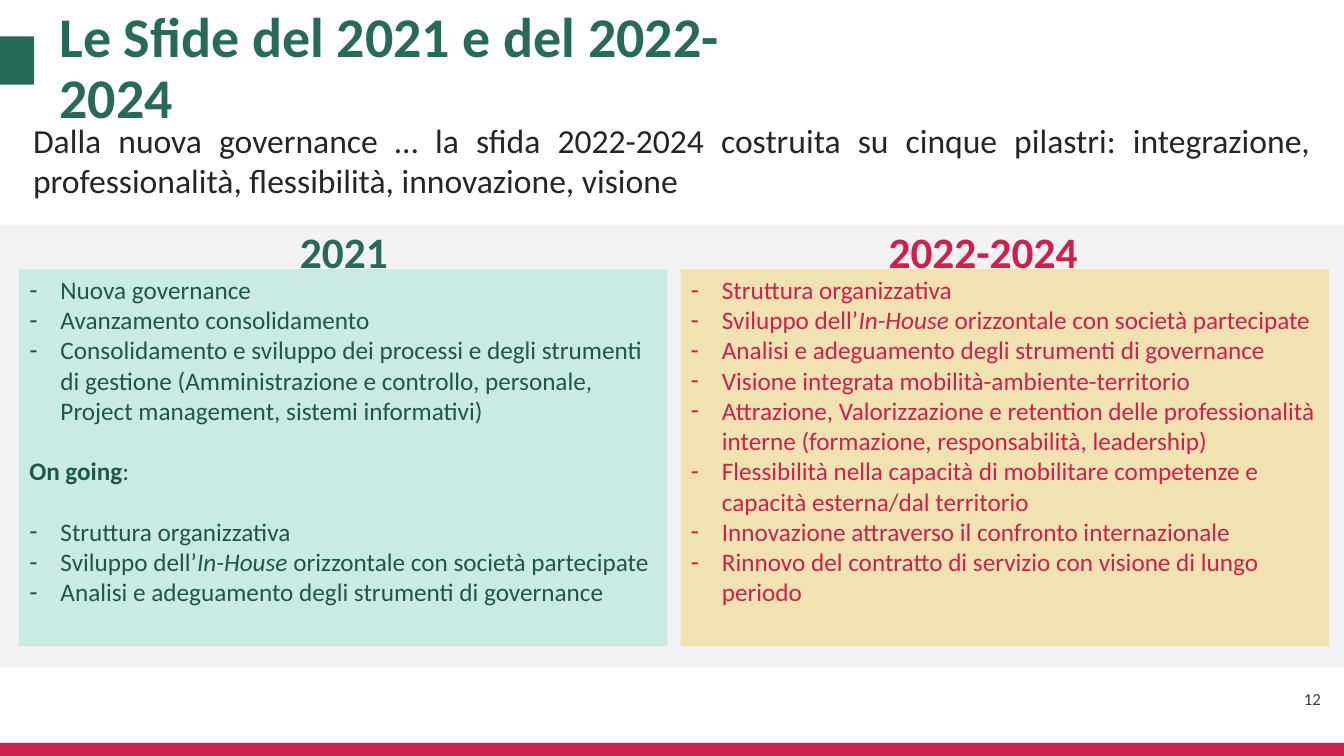
"""Build the slide on the challenges of 2021 and 2022-2024."""
from dataclasses import dataclass
from typing import Optional

import lxml.etree
import pptx
import pptx.dml.color
import pptx.enum.shapes
import pptx.enum.text
import pptx.oxml.ns
import pptx.shapes.autoshape
import pptx.slide
import pptx.text.text
import pptx.util

Inches = pptx.util.Inches
Pt = pptx.util.Pt
ALIGN = pptx.enum.text.PP_ALIGN
ANCHOR = pptx.enum.text.MSO_ANCHOR


@dataclass(frozen=True)
class Theme:
    font: str = "Calibri"
    green: str = "276A58"
    dark_green: str = "205647"
    red: str = "CF204B"
    mint: str = "CAEBE2"
    sand: str = "F0E2B1"
    grey: str = "F2F2F2"
    ink: str = "252525"
    number_ink: str = "413A3A"
    title: int = 40
    heading: int = 31
    lead: int = 24
    body: int = 18
    number: int = 12
    indent: float = 0.31


@dataclass(frozen=True)
class Box:
    left: float
    top: float
    width: float
    height: float

    def emu(self) -> list[int]:
        return [Inches(v) for v in (self.left, self.top, self.width, self.height)]


@dataclass(frozen=True)
class Run:
    text: str
    bold: bool = False
    italic: bool = False


@dataclass(frozen=True)
class Para:
    runs: tuple[Run, ...]
    bullet: Optional[str] = None
    before: float = 0


@dataclass(frozen=True)
class Band:
    box: Box
    fill: str


@dataclass(frozen=True)
class Column:
    heading: str
    heading_box: Box
    heading_color: str
    text_color: str
    fill: str
    items: tuple[Para, ...]


THEME = Theme()


def item(*runs: Run, before: float = 0) -> Para:
    return Para(runs, "-", before)


def items(*texts: str) -> tuple[Para, ...]:
    return tuple(item(Run(text)) for text in texts)


BANDS = (
    Band(Box(0, 7.37, 13.33, 0.13), THEME.red),
    Band(Box(0, 2.23, 13.33, 4.39), THEME.grey),
    Band(Box(0, 0.36, 0.34, 0.48), THEME.green),
)
IN_HOUSE = (Run("Sviluppo dell’"), Run("In-House", italic=True),
            Run(" orizzontale con società partecipate"))
GOVERNANCE = Run("Analisi e adeguamento degli strumenti di governance")
STRUCTURE = Run("Struttura organizzativa")
LINE_GAP = 21.6

COLUMNS = (
    Column("2021", Box(2.69, 2.3, 1.44, 0.51), THEME.green, THEME.dark_green, THEME.mint, (
        *items(
            "Nuova governance",
            "Avanzamento consolidamento",
            "Consolidamento e sviluppo dei processi e degli strumenti di gestione "
            "(Amministrazione e controllo, personale, Project management, sistemi informativi)",
        ),
        Para((Run("On going", bold=True), Run(":")), before=LINE_GAP),
        item(STRUCTURE, before=LINE_GAP),
        item(*IN_HOUSE),
        item(GOVERNANCE),
    )),
    Column("2022-2024", Box(8.54, 2.3, 2.42, 0.51), THEME.red, THEME.red, THEME.sand, (
        item(STRUCTURE),
        item(*IN_HOUSE),
        item(GOVERNANCE),
        *items(
            "Visione integrata mobilità-ambiente-territorio",
            "Attrazione, Valorizzazione e retention delle professionalità interne "
            "(formazione, responsabilità, leadership)",
            "Flessibilità nella capacità di mobilitare competenze e capacità "
            "esterna/dal territorio",
            "Innovazione attraverso il confronto internazionale",
            "Rinnovo del contratto di servizio con visione di lungo periodo",
        ),
    )),
)


def rgb(color: str) -> pptx.dml.color.RGBColor:
    return pptx.dml.color.RGBColor.from_string(color)


def set_bullet(p: pptx.text.text._Paragraph, char: Optional[str]) -> None:
    pPr = p._p.get_or_add_pPr()
    indent = Inches(THEME.indent) if char else 0
    pPr.set("marL", str(indent))
    pPr.set("indent", str(-indent))
    tag = "a:buChar" if char else "a:buNone"
    bullet = lxml.etree.SubElement(pPr, pptx.oxml.ns.qn(tag))
    if char:
        bullet.set("char", char)


def write(tf: pptx.text.text.TextFrame, text: str | tuple[Para, ...], *, size: int, color: str,
          bold: bool = False, align: ALIGN = ALIGN.LEFT, anchor: ANCHOR = ANCHOR.TOP,
          spacing: float = 1.0) -> None:
    tf.word_wrap = True
    tf.auto_size = pptx.enum.text.MSO_AUTO_SIZE.NONE
    tf.vertical_anchor = anchor
    paras = (Para((Run(text, bold),)),) if isinstance(text, str) else text
    for i, para in enumerate(paras):
        p = tf.add_paragraph() if i else tf.paragraphs[0]
        p.alignment = align
        p.line_spacing = spacing
        p.space_before = Pt(para.before)
        set_bullet(p, para.bullet)
        for run in para.runs:
            r = p.add_run()
            r.text = run.text
            r.font.name, r.font.size = THEME.font, Pt(size)
            r.font.bold, r.font.italic = run.bold, run.italic
            r.font.color.rgb = rgb(color)


def place(sp: pptx.shapes.autoshape.Shape, box: Box) -> pptx.text.text.TextFrame:
    sp.left, sp.top, sp.width, sp.height = box.emu()
    return sp.text_frame


def add_band(s: pptx.slide.Slide, band: Band) -> None:
    sp = s.shapes.add_shape(pptx.enum.shapes.MSO_SHAPE.RECTANGLE, *band.box.emu())
    sp.shadow.inherit = False
    sp.fill.solid()
    sp.fill.fore_color.rgb = rgb(band.fill)
    sp.line.fill.background()
    sp.element.getparent().insert(2, sp.element)


def add_column(s: pptx.slide.Slide, index: int, column: Column) -> None:
    heading, body = (s.placeholders[2 * index + k] for k in (1, 2))
    write(place(heading, column.heading_box), column.heading, size=THEME.heading, bold=True,
          color=column.heading_color, align=ALIGN.CENTER, anchor=ANCHOR.MIDDLE, spacing=0.7)
    body.fill.solid()
    body.fill.fore_color.rgb = rgb(column.fill)
    write(place(body, Box(0.19 + 6.56 * index, 2.67, 6.43, 3.74)), column.items,
          size=THEME.body, color=column.text_color)


def main() -> None:
    prs = pptx.Presentation()
    prs.slide_width, prs.slide_height = Inches(13.33), Inches(7.5)
    s = prs.slides.add_slide(prs.slide_layouts.get_by_name("Comparison"))
    for band in BANDS:
        add_band(s, band)
    write(place(s.shapes.title, Box(0.49, -0.03, 7.77, 1.45)), "Le Sfide del 2021 e del 2022-2024",
          size=THEME.title, color=THEME.green, bold=True, anchor=ANCHOR.MIDDLE, spacing=0.9)
    for index, column in enumerate(COLUMNS):
        add_column(s, index, column)
    lead = s.shapes.add_textbox(*Box(0.23, 1.14, 12.87, 0.5).emu())
    write(lead.text_frame, "Dalla nuova governance … la sfida 2022-2024 costruita su cinque pilastri: "
          "integrazione, professionalità, flessibilità, innovazione, visione",
          size=THEME.lead, color=THEME.ink, align=ALIGN.JUSTIFY)
    number = s.shapes.add_textbox(*Box(12.55, 6.62, 0.65, 0.63).emu())
    write(number.text_frame, "12", size=THEME.number, color=THEME.number_ink,
          align=ALIGN.RIGHT, anchor=ANCHOR.MIDDLE)
    prs.save("out.pptx")


if __name__ == "__main__":
    main()
